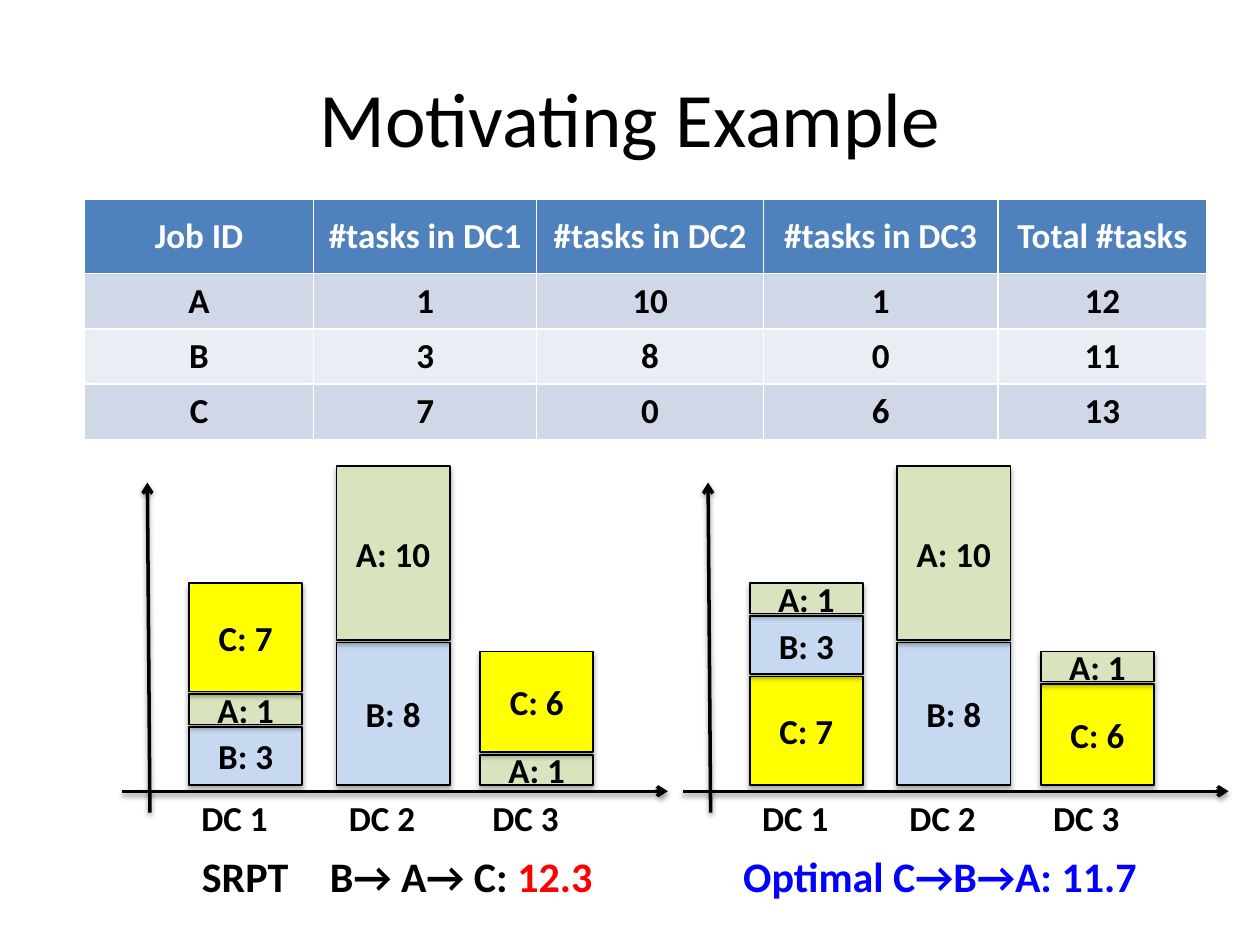
"""Build the Motivating Example slide: a task table above two stacked schedules."""
from lxml.etree import SubElement
from pptx import Presentation
from pptx.dml.color import RGBColor
from pptx.enum.shapes import MSO_CONNECTOR, MSO_SHAPE
from pptx.enum.text import MSO_ANCHOR, PP_ALIGN
from pptx.oxml.ns import qn
from pptx.util import Inches, Pt

BLACK = RGBColor(0x00, 0x00, 0x00)
WHITE = RGBColor(0xFF, 0xFF, 0xFF)
RED = RGBColor(0xFF, 0x00, 0x00)
BLUE = RGBColor(0x00, 0x00, 0xFF)
HEADER_FILL = RGBColor(0x4F, 0x81, 0xBD)
BAND_FILLS = (RGBColor(0xE9, 0xED, 0xF4), RGBColor(0xD0, 0xD8, 0xE8))
JOB_FILLS = {
    "A": RGBColor(0xD7, 0xE4, 0xBD),
    "B": RGBColor(0xC6, 0xD9, 0xF1),
    "C": RGBColor(0xFF, 0xFF, 0x00),
}

TABLE_ROWS = [
    ("Job ID", "#tasks in DC1", "#tasks in DC2", "#tasks in DC3", "Total #tasks"),
    ("A", "1", "10", "1", "12"),
    ("B", "3", "8", "0", "11"),
    ("C", "7", "0", "6", "13"),
]
COLUMN_WIDTHS = (1.82, 1.77, 1.8, 1.86, 1.66)
ROW_HEIGHTS = (0.59, 0.44, 0.44, 0.44)

BAR_HEIGHTS = {1: 0.24, 3: 0.46, 6: 0.8, 7: 0.86, 8: 1.13, 10: 1.38}
BAR_LEFTS = {"DC 1": 1.5, "DC 2": 2.67, "DC 3": 3.81}
BAR_WIDTH, BAR_GAP, BASELINE, PANEL_STEP = 0.9, 0.02, 6.23, 4.45
SCHEDULES = [
    {
        "DC 1": [("B", 3), ("A", 1), ("C", 7)],
        "DC 2": [("B", 8), ("A", 10)],
        "DC 3": [("A", 1), ("C", 6)],
    },
    {
        "DC 1": [("C", 7), ("B", 3), ("A", 1)],
        "DC 2": [("B", 8), ("A", 10)],
        "DC 3": [("C", 6), ("A", 1)],
    },
]
AXES = [((1.19, 6.45), (1.17, 3.83)), ((0.97, 6.28), (5.3, 6.28))]
CAPTIONS = [
    ((1.49, 6.7, 0.91, 0.5), [("SRPT", BLACK)]),
    ((2.4, 6.7, 2.52, 0.5), [("B→ A→ C: ", BLACK), ("12.3", RED)]),
    ((5.42, 6.7, 4.08, 0.5), [("Optimal C→B→A: 11.7", BLUE)]),
]


def write(frame, spans, size=20, bold=True, align=PP_ALIGN.CENTER, anchor=MSO_ANCHOR.MIDDLE):
    """Write coloured spans as one paragraph of a text frame."""
    frame.word_wrap = True
    frame.vertical_anchor = anchor
    para = frame.paragraphs[0]
    para.alignment = align
    for text, color in spans:
        span = para.add_run()
        span.text = text
        span.font.name = "Calibri"
        span.font.size = Pt(size)
        span.font.bold = bold
        span.font.color.rgb = color


def add_label(slide, place, spans, **text_format):
    """Add a text box at left, top, width, height."""
    box = slide.shapes.add_textbox(*map(Inches, place))
    write(box.text_frame, spans, **text_format)


def add_shadow(shape, distance, opacity):
    """Give a shape a soft shadow falling straight down."""
    properties = shape._element.spPr
    effects = properties.find(qn("a:effectLst"))
    if effects is None:
        effects = SubElement(properties, qn("a:effectLst"))
    shadow = SubElement(effects, qn("a:outerShdw"), blurRad=str(Pt(3.1)),
                        dist=str(Pt(distance)), dir="5400000", rotWithShape="0")
    color = SubElement(shadow, qn("a:srgbClr"), val=str(BLACK))
    SubElement(color, qn("a:alpha"), val=str(opacity * 1000))


def add_table(slide):
    """Add the table of tasks per job and data centre."""
    table = slide.shapes.add_table(
        len(ROW_HEIGHTS), len(COLUMN_WIDTHS), Inches(0.67), Inches(1.58),
        Inches(sum(COLUMN_WIDTHS)), Inches(sum(ROW_HEIGHTS))).table
    for column, width in zip(table.columns, COLUMN_WIDTHS):
        column.width = Inches(width)
    for index, (row, height, texts) in enumerate(zip(table.rows, ROW_HEIGHTS, TABLE_ROWS)):
        row.height = Inches(height)
        for cell, text in zip(row.cells, texts):
            cell.fill.solid()
            cell.fill.fore_color.rgb = BAND_FILLS[index % 2] if index else HEADER_FILL
            cell.vertical_anchor = MSO_ANCHOR.MIDDLE
            write(cell.text_frame, [(text, BLACK if index else WHITE)])


def add_axis(slide, start, end, shift):
    """Add one axis with an open arrowhead."""
    axis = slide.shapes.add_connector(
        MSO_CONNECTOR.STRAIGHT, Inches(start[0] + shift), Inches(start[1]),
        Inches(end[0] + shift), Inches(end[1]))
    axis.line.color.rgb = BLACK
    axis.line.width = Pt(2)
    SubElement(axis._element.spPr.find(qn("a:ln")), qn("a:tailEnd"), type="arrow")
    add_shadow(axis, 1.6, 38)


def add_bar(slide, job, tasks, left, top):
    """Add one job's block of tasks."""
    bar = slide.shapes.add_shape(MSO_SHAPE.RECTANGLE, Inches(left), Inches(top),
                                 Inches(BAR_WIDTH), Inches(BAR_HEIGHTS[tasks]))
    bar.shadow.inherit = False
    bar.fill.solid()
    bar.fill.fore_color.rgb = JOB_FILLS[job]
    bar.line.color.rgb = BLACK
    bar.line.width = Pt(1)
    add_shadow(bar, 1.8, 35)
    write(bar.text_frame, [(f"{job}: {tasks}", BLACK)])


def add_schedule(slide, schedule, shift):
    """Add axes, stacked bars and data centre labels of one schedule."""
    for start, end in AXES:
        add_axis(slide, start, end, shift)
    for center, stack in schedule.items():
        left, bottom = BAR_LEFTS[center] + shift, BASELINE
        for job, tasks in stack:
            top = bottom - BAR_HEIGHTS[tasks]
            add_bar(slide, job, tasks, left, top)
            bottom = top - BAR_GAP
        add_label(slide, (left, 6.27, 0.93, 0.29), [(center, BLACK)],
                  align=PP_ALIGN.LEFT, anchor=MSO_ANCHOR.TOP)


def main():
    """Assemble and save the deck."""
    deck = Presentation()
    deck.slide_width, deck.slide_height = Inches(10), Inches(7.5)
    slide = deck.slides.add_slide(deck.slide_layouts[6])
    add_label(slide, (0.5, 0.3, 9, 1.25), [("Motivating Example", BLACK)], size=44, bold=False)
    add_table(slide)
    for index, schedule in enumerate(SCHEDULES):
        add_schedule(slide, schedule, index * PANEL_STEP)
    for place, spans in CAPTIONS:
        add_label(slide, place, spans, size=24, anchor=MSO_ANCHOR.TOP)
    deck.save("out.pptx")


if __name__ == "__main__":
    main()
